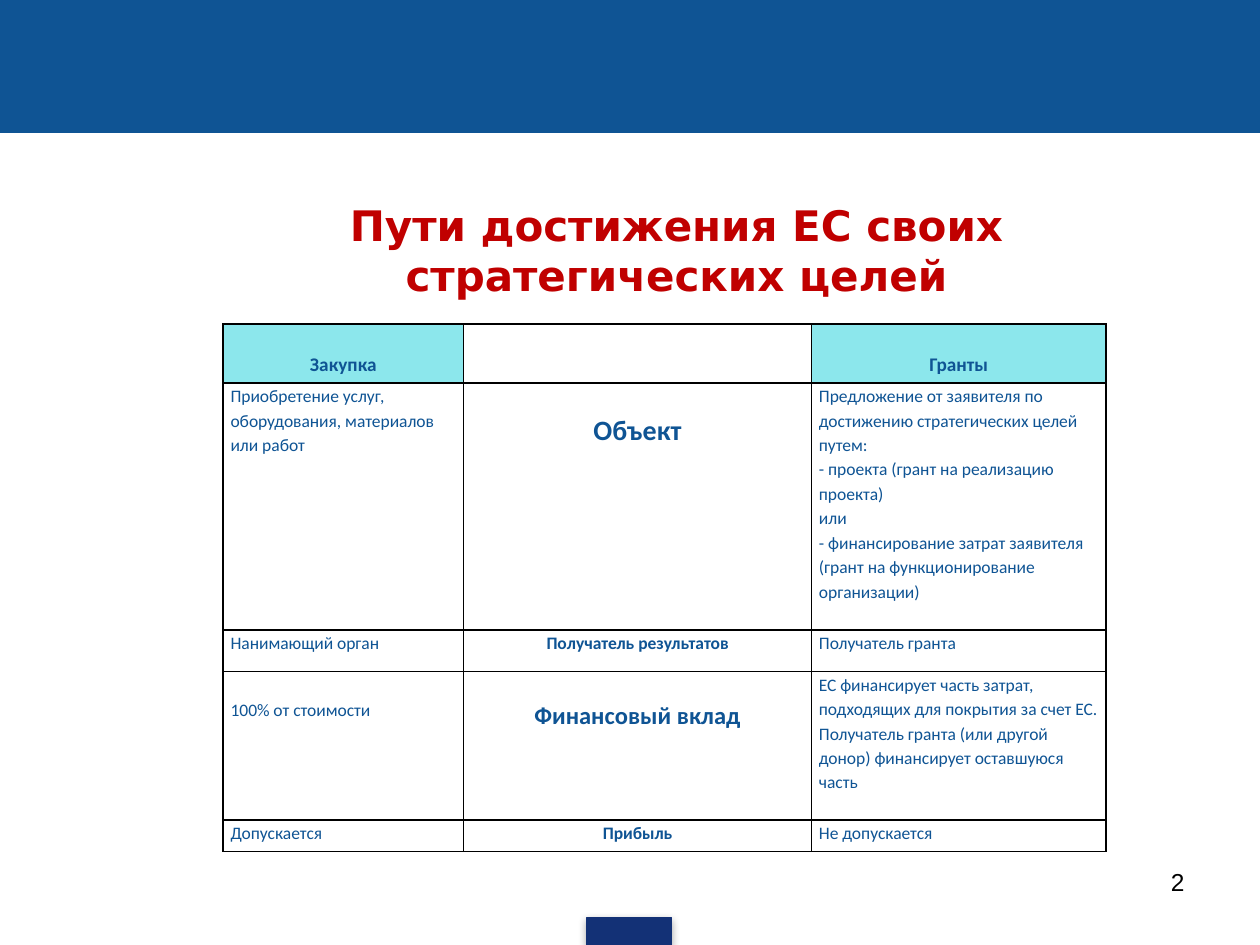
import pptx
import pptx.dml.color
import pptx.enum.shapes
import pptx.enum.text
import pptx.oxml
import pptx.oxml.ns
import pptx.util
from pptx.util import Inches

ALIGN = pptx.enum.text.PP_ALIGN
NS = pptx.oxml.ns.nsdecls("a")
BLUE, NAVY, RED, AQUA, BLACK = "0F5494", "133176", "C00000", "8CE7EC", "000000"


def rgb(value):
    return pptx.dml.color.RGBColor.from_string(value)


class Deck:
    """Holds the text style and the current slide, and draws its elements."""

    font, size, color, spacing = "Calibri", 10, BLUE, 1.15

    def __init__(self):
        self.prs = pptx.Presentation()
        self.prs.slide_width, self.prs.slide_height = Inches(10), Inches(7.5)
        self.s = self.prs.slides.add_slide(self.prs.slide_layouts[5])

    def run(self, p, text, size=None, bold=False, color=None, font=None):
        r = p.add_run()
        r.text = text
        r.font.size = pptx.util.Pt(size or self.size)
        r.font.bold = bold
        r.font.name = font or self.font
        r.font.color.rgb = rgb(color or self.color)

    def rect(self, x, y, w, h, fill, shadow=False):
        sp = self.s.shapes.add_shape(pptx.enum.shapes.MSO_SHAPE.RECTANGLE,
                                     Inches(x), Inches(y), Inches(w), Inches(h))
        sp.shadow.inherit = False
        sp.fill.solid()
        sp.fill.fore_color.rgb = sp.line.color.rgb = rgb(fill)
        sp.line.width = pptx.util.Pt(0.75)
        if shadow:
            effects = sp._element.spPr.find(pptx.oxml.ns.qn("a:effectLst"))
            effects.append(pptx.oxml.parse_xml(
                f'<a:outerShdw {NS} blurRad="63500" dist="22860" dir="5400000" '
                'rotWithShape="0"><a:srgbClr val="000000"><a:alpha val="35000"/>'
                '</a:srgbClr></a:outerShdw>'))

    def title(self, x, y, w, h, lines):
        sp = self.s.shapes.title
        sp.left, sp.top, sp.width, sp.height = map(Inches, (x, y, w, h))
        tf = sp.text_frame
        tf.word_wrap = True
        tf.margin_left = Inches(0.91)
        tf.vertical_anchor = pptx.enum.text.MSO_ANCHOR.MIDDLE
        p = tf.paragraphs[0]
        p.alignment = ALIGN.CENTER
        for i, line in enumerate(lines):
            if i:
                p.add_line_break()
            self.run(p, line, 24, True, RED, "DejaVu Sans")

    def number(self, x, y, w, h, text):
        tf = self.s.shapes.add_textbox(Inches(x), Inches(y), Inches(w), Inches(h)).text_frame
        tf.word_wrap = True
        p = tf.paragraphs[0]
        p.alignment = ALIGN.RIGHT
        self.run(p, text, 14, color=BLACK, font="Arial")

    def cell(self, cell, lines, size, bold, top, fill):
        cell.margin_left = cell.margin_right = Inches(0.06)
        cell.margin_top, cell.margin_bottom = Inches(top), 0
        for side in ("lnL", "lnR", "lnT", "lnB"):
            cell._tc.get_or_add_tcPr().append(pptx.oxml.parse_xml(
                f'<a:{side} {NS} w="12700"><a:solidFill><a:srgbClr val="{BLACK}"/>'
                f'</a:solidFill></a:{side}>'))
        if fill:
            cell.fill.solid()
            cell.fill.fore_color.rgb = rgb(fill)
        else:
            cell.fill.background()
        tf = cell.text_frame
        for i, line in enumerate(lines):
            p = tf.add_paragraph() if i else tf.paragraphs[0]
            p.alignment = ALIGN.CENTER if bold else ALIGN.LEFT
            p.line_spacing = self.spacing
            self.run(p, line, size, bold)

    def table(self, x, y, widths, heights, rows):
        tbl = self.s.shapes.add_table(len(rows), len(widths), Inches(x), Inches(y),
                                      Inches(sum(widths)), Inches(sum(heights))).table
        tbl.first_row = tbl.horz_banding = False
        for col, w in zip(tbl.columns, widths):
            col.width = Inches(w)
        for i, (h, row) in enumerate(zip(heights, rows)):
            tbl.rows[i].height = Inches(h)
            for j, (lines, size, top) in enumerate(row):
                header = i == 0
                self.cell(tbl.cell(i, j), lines, size, header or j == 1, top,
                          AQUA if header and lines else None)


def main():
    line = 0.2
    rows = [
        [(["Закупка"], 11, line), ([], 10, 0), (["Гранты"], 11, line)],
        [(["Приобретение услуг, оборудования, материалов или работ"], 10, 0),
         (["Объект"], 16, line),
         (["Предложение от заявителя по достижению стратегических целей путем:",
           "- проекта (грант на реализацию проекта)",
           "или",
           "- финансирование затрат заявителя (грант на функционирование организации)"], 10, 0)],
        [(["Нанимающий орган"], 10, 0), (["Получатель результатов"], 10, 0),
         (["Получатель гранта"], 10, 0)],
        [(["100% от стоимости"], 10, line), (["Финансовый вклад"], 14, line),
         (["ЕС финансирует часть затрат, подходящих для покрытия за счет ЕС.",
           "Получатель гранта (или другой донор) финансирует оставшуюся часть"], 10, 0)],
        [(["Допускается"], 10, 0), (["Прибыль"], 10, 0), (["Не допускается"], 10, 0)],
    ]
    deck = Deck()
    deck.rect(0, 0, 10, 1.05, BLUE)
    deck.rect(4.66, 7.28, 0.67, 0.22, NAVY, shadow=True)
    deck.title(0.28, 1.47, 9.37, 1.02, ["Пути достижения ЕС своих", "стратегических целей"])
    deck.number(7.17, 6.83, 2.33, 0.52, "2")
    deck.table(1.77, 2.57, [1.91, 2.76, 2.34], [0.47, 1.96, 0.33, 1.18, 0.25], rows)
    deck.prs.save("out.pptx")


if __name__ == "__main__":
    main()
